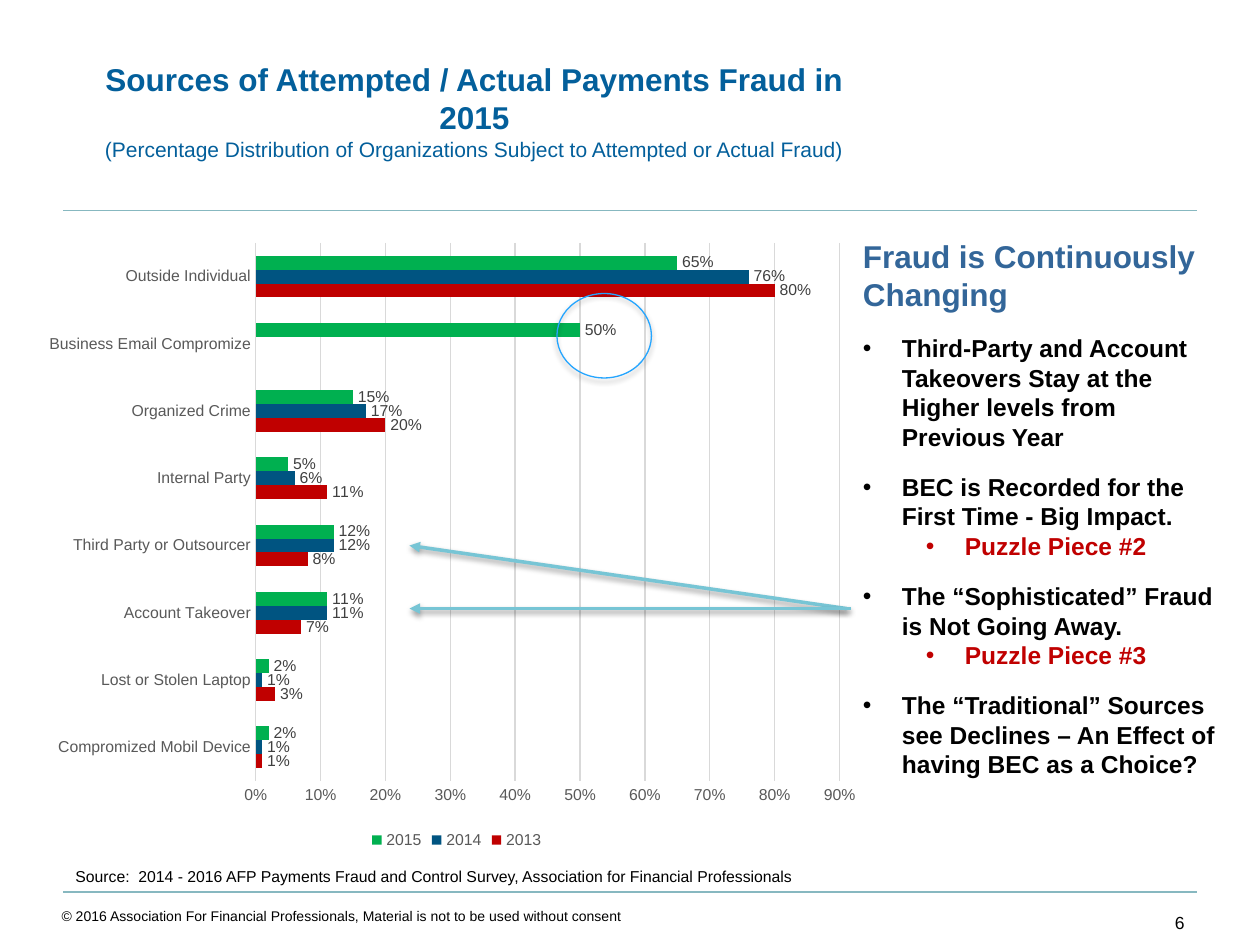
from lxml.etree import SubElement
from pptx import Presentation
from pptx.chart.data import CategoryChartData
from pptx.dml.color import RGBColor
from pptx.enum.chart import XL_CHART_TYPE, XL_LABEL_POSITION, XL_LEGEND_POSITION, XL_TICK_MARK
from pptx.enum.shapes import MSO_CONNECTOR, MSO_SHAPE
from pptx.enum.text import MSO_ANCHOR, PP_ALIGN
from pptx.oxml.ns import qn
from pptx.util import Inches, Pt

CATEGORIES = ["Compromized Mobil Device", "Lost or Stolen Laptop", "Account Takeover",
              "Third Party or Outsourcer", "Internal Party", "Organized Crime",
              "Business Email Compromize", "Outside Individual"]
SERIES = [("2013", "C00000", [0.01, 0.03, 0.07, 0.08, 0.11, 0.2, None, 0.8]),
          ("2014", "005481", [0.01, 0.01, 0.11, 0.12, 0.06, 0.17, None, 0.76]),
          ("2015", "00B050", [0.02, 0.02, 0.11, 0.12, 0.05, 0.15, 0.5, 0.65])]
FINDINGS = [
    (0, "Third-Party and Account Takeovers Stay at the Higher levels from Previous Year"),
    (0, "BEC is Recorded for the First Time - Big Impact."),
    (1, "Puzzle Piece #2"),
    (0, "The “Sophisticated” Fraud is Not Going Away."),
    (1, "Puzzle Piece #3"),
    (0, "The “Traditional” Sources see Declines – An Effect of having BEC as a Choice?"),
]


def color(value):
    """Return the colour of a hex string."""
    return RGBColor.from_string(value)


def style_font(font, size, value, bold=False):
    """Set face, size, colour and weight of a font."""
    font.name = "Arial"
    font.size = Pt(size)
    font.bold = bold
    font.color.rgb = color(value)


def place(shape, box):
    """Move a shape to a box of left, top, width and height in inches."""
    shape.left, shape.top, shape.width, shape.height = map(Inches, box)


def add_text(page, box, text, size, align=PP_ALIGN.LEFT, anchor=MSO_ANCHOR.TOP):
    """Add a wrapped text box with one black paragraph."""
    frame = page.shapes.add_textbox(*map(Inches, box)).text_frame
    frame.word_wrap = True
    frame.vertical_anchor = anchor
    frame.text = text
    para = frame.paragraphs[0]
    para.alignment = align
    style_font(para.runs[0].font, size, "000000")
    return frame


def set_shadow(shape, alpha=None, blur=0, distance=0):
    """Replace the theme shadow by none or by one that falls straight down."""
    effects = SubElement(shape._element.spPr, qn("a:effectLst"))
    if alpha:
        outer = SubElement(effects, qn("a:outerShdw"), blurRad=str(Pt(blur)),
                           dist=str(Pt(distance)), dir="5400000", rotWithShape="0")
        shade = SubElement(outer, qn("a:srgbClr"), val="000000")
        SubElement(shade, qn("a:alpha"), val=str(alpha * 1000))


def add_line(page, start, end, value, width):
    """Add a straight line between two points in inches."""
    line = page.shapes.add_connector(MSO_CONNECTOR.STRAIGHT, *map(Inches, start + end))
    line.line.color.rgb = color(value)
    line.line.width = Pt(width)
    return line


def add_rule(page, top):
    """Add a thin rule across the page."""
    set_shadow(add_line(page, (0.5, top), (9.5, top), "87B8C0", 1))


def add_arrow(page, start, end):
    """Add an arrow with a soft shadow."""
    arrow = add_line(page, start, end, "77C5D5", 2)
    SubElement(arrow.line._get_or_add_ln(), qn("a:tailEnd"), type="triangle")
    set_shadow(arrow, 38, 3.1, 1.6)


def add_highlight(page, box):
    """Add an open ellipse around one value."""
    ring = page.shapes.add_shape(MSO_SHAPE.OVAL, *map(Inches, box))
    ring.fill.background()
    ring.line.color.rgb = color("24A5FF")
    ring.line.width = Pt(0.75)
    set_shadow(ring, 35, 3.1, 1.8)


def fill_title(page, box):
    """Place and fill the title with its subtitle."""
    title = page.shapes.title
    place(title, box)
    frame = title.text_frame
    frame.word_wrap = True
    frame.vertical_anchor = MSO_ANCHOR.TOP
    frame.text = ("Sources of Attempted / Actual Payments Fraud in 2015\n"
                  "(Percentage Distribution of Organizations Subject to Attempted or Actual Fraud)")
    for para, size, bold in zip(frame.paragraphs, (18, 12), (True, False)):
        para.alignment = PP_ALIGN.CENTER
        para.space_before = Pt(0)
        style_font(para.runs[0].font, size, "035F9B", bold)


def add_findings(page, box):
    """Add the heading and its bulleted findings."""
    frame = add_text(page, box, "Fraud is Continuously Changing", 18)
    style_font(frame.paragraphs[0].runs[0].font, 18, "336699", True)
    for level, text in FINDINGS:
        para = frame.add_paragraph()
        para.text = text
        para.level = level
        para.space_before = Pt(0 if level else 12)
        props = para._p.get_or_add_pPr()
        props.set("marL", str(Inches(0.81 if level else 0.31)))
        props.set("indent", str(Inches(-0.31)))
        SubElement(props, qn("a:buFont"), typeface="Arial")
        SubElement(props, qn("a:buChar"), char="•")
        style_font(para.runs[0].font, 14, "C00000" if level else "000000", True)


def style_axes(chart):
    """Format the category and value axes."""
    for axis in (chart.category_axis, chart.value_axis):
        axis.major_tick_mark = axis.minor_tick_mark = XL_TICK_MARK.NONE
        style_font(axis.tick_labels.font, 9, "595959")
    values = chart.value_axis
    values.minimum_scale, values.maximum_scale, values.major_unit = 0, 0.9, 0.1
    values.tick_labels.number_format = "0%"
    values.tick_labels.number_format_is_linked = False
    values.format.line.fill.background()
    for rule in (chart.category_axis.format.line, values.major_gridlines.format.line):
        rule.color.rgb = color("D9D9D9")
        rule.width = Pt(0.75)


def add_fraud_chart(page, box):
    """Add the clustered bars of fraud sources by year."""
    data = CategoryChartData(number_format="0%")
    data.categories = CATEGORIES
    for name, _, values in SERIES:
        data.add_series(name, values)
    chart = page.shapes.add_chart(XL_CHART_TYPE.BAR_CLUSTERED, *map(Inches, box), data).chart
    style_font(chart.font, 10, "000000")
    chart.has_title = False
    chart.has_legend = True
    chart.legend.position = XL_LEGEND_POSITION.BOTTOM
    chart.legend.include_in_layout = False
    style_font(chart.legend.font, 9, "595959")
    style_axes(chart)
    plot = chart.plots[0]
    plot.gap_width, plot.overlap, plot.vary_by_categories = 182, 0, False
    for series, (_, value, _) in zip(plot.series, SERIES):
        series.format.fill.solid()
        series.format.fill.fore_color.rgb = color(value)
        series.invert_if_negative = False
        labels = series.data_labels
        labels.show_value = True
        labels.number_format = "0%"
        labels.number_format_is_linked = False
        labels.position = XL_LABEL_POSITION.OUTSIDE_END
        style_font(labels.font, 9, "404040")


def add_footer(page, box):
    """Add the copyright line and the page number."""
    left, top, width, height = box
    add_text(page, (left, top, 8.46, height),
             "© 2016 Association For Financial Professionals, "
             "Material is not to be used without consent", 8)
    add_text(page, (left + width - 0.5, top, 0.5, height), "6", 10,
             PP_ALIGN.RIGHT, MSO_ANCHOR.MIDDLE)


def main():
    """Build and save the slide."""
    deck = Presentation()
    deck.slide_width, deck.slide_height = Inches(10), Inches(7.5)
    page = deck.slides.add_slide(deck.slide_layouts[5])
    for top in (1.67, 7.08):
        add_rule(page, top)
    add_text(page, (0.5, 6.83, 6.22, 0.25),
             "Source:\u00a0 2014 - 2016 AFP Payments Fraud and Control Survey, "
             "Association for Financial Professionals".replace("\u00a0", " "), 9)
    fill_title(page, (0.6, 0.43, 6.33, 0.91))
    add_findings(page, (6.75, 1.83, 3, 4.58))
    add_footer(page, (0.39, 7.15, 9.11, 0.35))
    add_fraud_chart(page, (0.33, 1.83, 6.59, 4.95))
    add_highlight(page, (4.42, 2.33, 0.75, 0.67))
    add_arrow(page, (6.72, 4.83), (3.25, 4.33))
    add_arrow(page, (6.75, 4.83), (3.25, 4.83))
    deck.save("out.pptx")


if __name__ == "__main__":
    main()
